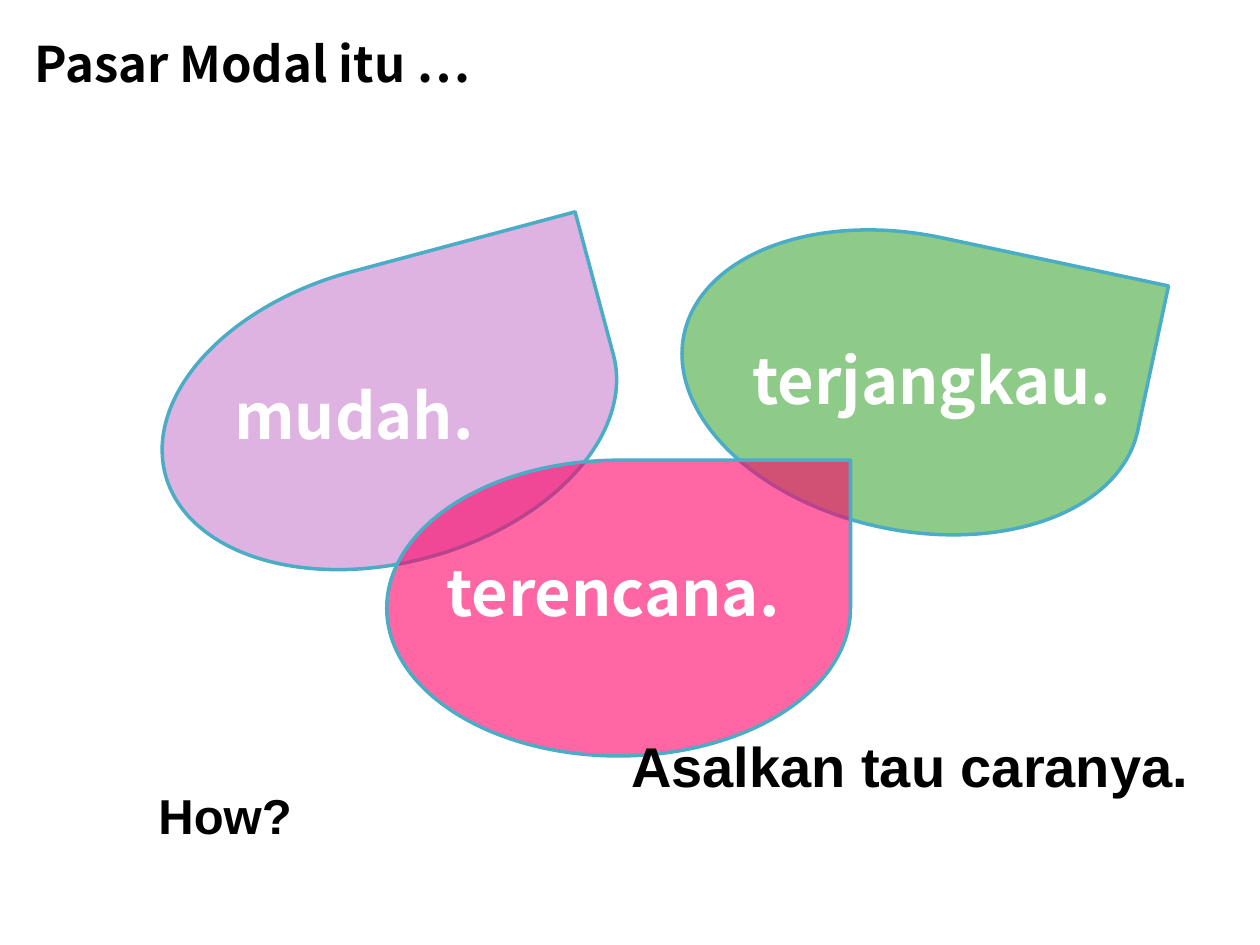
from dataclasses import dataclass

from lxml import etree
from pptx import Presentation
from pptx.dml.color import RGBColor
from pptx.enum.shapes import MSO_SHAPE
from pptx.enum.text import MSO_ANCHOR, MSO_AUTO_SIZE, PP_ALIGN
from pptx.oxml.ns import qn
from pptx.util import Pt

TEARDROP = MSO_SHAPE.TEAR
MIDDLE = MSO_ANCHOR.MIDDLE
GROW = MSO_AUTO_SIZE.SHAPE_TO_FIT_TEXT
LEFT, CENTER = PP_ALIGN.LEFT, PP_ALIGN.CENTER
TITLE_ONLY = 5


@dataclass(frozen=True)
class Theme:
    display_font: str = "Noto Sans CJK JP"
    body_font: str = "Arial"
    ink: str = "000000"
    white: str = "FFFFFF"
    outline: str = "4BACC6"
    lilac: str = "D094D6"
    green: str = "5FB557"
    pink: str = "FF0066"
    title_size: int = 28
    question_size: int = 28
    condition_size: int = 32
    petal_size: int = 36
    outline_width: int = 2


class SlideBuilder:
    def __init__(self, slide, theme):
        self.slide = slide
        self.theme = theme

    def _write(self, frame, text, font, size, color, align):
        frame.text = text
        frame.word_wrap = True
        paragraph = frame.paragraphs[0]
        paragraph.alignment = align
        for run in paragraph.runs:
            run.font.name = font
            run.font.size = Pt(size)
            run.font.bold = True
            run.font.color.rgb = RGBColor.from_string(color)

    def title(self, text, left, top, width, height):
        heading = self.slide.shapes.title
        heading.left, heading.top = Pt(left), Pt(top)
        heading.width, heading.height = Pt(width), Pt(height)
        heading.text_frame.vertical_anchor = MIDDLE
        self._write(heading.text_frame, text, self.theme.display_font,
                    self.theme.title_size, self.theme.ink, LEFT)

    def petal(self, left, top, color, opacity, rotation=0):
        """Add a translucent teardrop; opacity is in percent."""
        petal = self.slide.shapes.add_shape(
            TEARDROP, Pt(left), Pt(top), Pt(265), Pt(169))
        petal.rotation = rotation
        petal.shadow.inherit = False
        petal.fill.solid()
        petal.fill.fore_color.rgb = RGBColor.from_string(color)
        tint = petal.fill._xPr.find(qn("a:solidFill"))[0]
        etree.SubElement(tint, qn("a:alpha")).set("val", str(opacity * 1000))
        petal.line.color.rgb = RGBColor.from_string(self.theme.outline)
        petal.line.width = Pt(self.theme.outline_width)

    def text(self, text, left, top, width, height, font, size, color, align=LEFT):
        box = self.slide.shapes.add_textbox(
            Pt(left), Pt(top), Pt(width), Pt(height))
        self._write(box.text_frame, text, font, size, color, align)
        box.text_frame.auto_size = GROW

    def petal_label(self, text, left, top, width):
        self.text(text, left, top, width, 51, self.theme.display_font,
                  self.theme.petal_size, self.theme.white, CENTER)


def main():
    theme = Theme()
    deck = Presentation()
    deck.slide_width, deck.slide_height = Pt(720), Pt(540)
    slide = deck.slides.add_slide(deck.slide_layouts[TITLE_ONLY])
    builder = SlideBuilder(slide, theme)

    builder.title("Pasar Modal itu …", 12.5, 0, 672, 72)
    builder.petal(90, 152.5, theme.lilac, 70, rotation=345)
    builder.petal_label("mudah.", 111.5, 211.5, 181.5)
    builder.text("How?", 83.5, 445.5, 100, 41, theme.body_font,
                 theme.question_size, theme.ink)
    builder.petal(388, 134, theme.green, 70, rotation=12)
    builder.petal(221, 263, theme.pink, 60)
    builder.petal_label("terjangkau.", 410.5, 191.5, 244)
    builder.petal_label("terencana.", 239, 313, 222.5)
    builder.text("Asalkan tau caranya.", 353.5, 414.5, 475, 46, theme.body_font,
                 theme.condition_size, theme.ink)

    deck.save("out.pptx")


if __name__ == "__main__":
    main()
